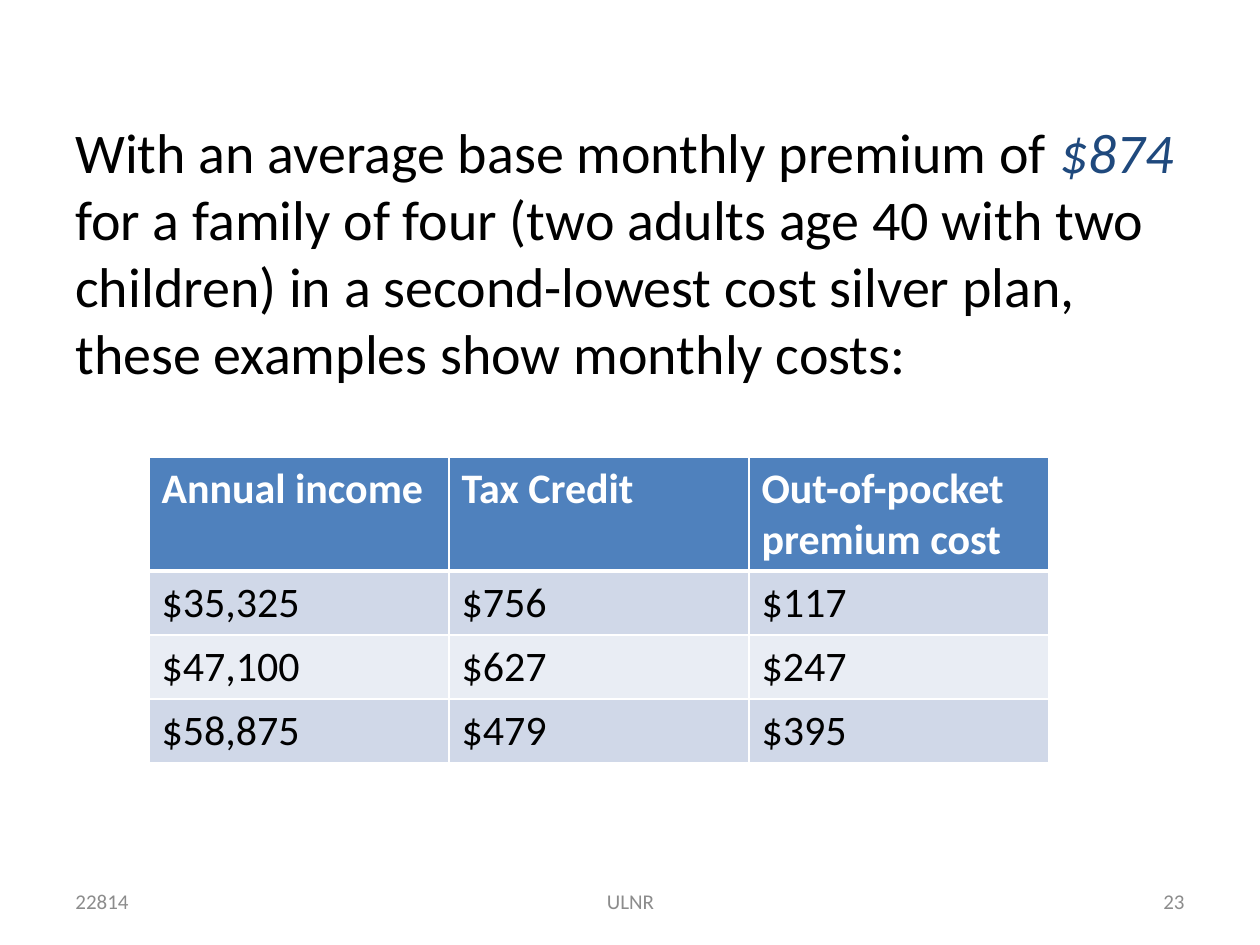
from pptx import Presentation
from pptx.dml.color import RGBColor
from pptx.enum.text import MSO_ANCHOR as Anchor, PP_ALIGN as Align
from pptx.oxml.ns import qn
from pptx.util import Emu, Pt
from lxml.etree import SubElement

SCALE = 914400 / 126


def px(length):
    return Emu(round(length * SCALE))


def style(span, size, color, bold=False, italic=False):
    font = span.font
    font.name = "Calibri"
    font.size = Pt(size)
    font.bold = bold
    font.italic = italic
    font.color.rgb = RGBColor.from_string(color)


deck = Presentation()
deck.slide_width, deck.slide_height = px(1260), px(945)
page = deck.slides.add_slide(deck.slide_layouts[6])

intro = page.shapes.add_textbox(px(63), px(111), px(1134), px(733))
intro.text_frame.word_wrap = True
para = intro.text_frame.paragraphs[0]
for text, color, italic in [
    ("With an average base monthly premium of ", "000000", False),
    ("$874 ", "1F497D", True),
    ("for a family of four (two adults age 40 with two children) in a "
     "second-lowest cost silver plan, these examples show monthly costs:", "000000", False),
]:
    span = para.add_run()
    span.text = text
    style(span, 32, color, italic=italic)

rows = [
    ("Annual income", "Tax Credit", "Out-of-pocket premium cost"),
    ("$35,325", "$756", "$117"),
    ("$47,100", "$627", "$247"),
    ("$58,875", "$479", "$395"),
]
fills = ["4F81BD", "D0D8E8", "E9EDF4", "D0D8E8"]
heights = [114, 64, 64, 64]
table = page.shapes.add_table(4, 3, px(149), px(457), px(900), px(sum(heights))).table
for column in table.columns:
    column.width = px(300)
for r, (values, fill, height) in enumerate(zip(rows, fills, heights)):
    table.rows[r].height = px(height)
    for c, value in enumerate(values):
        cell = table.cell(r, c)
        cell.text_frame.text = value
        header = r == 0
        style(cell.text_frame.paragraphs[0].runs[0], 24,
              "FFFFFF" if header else "000000", bold=header)
        properties = cell._tc.get_or_add_tcPr()
        for side in ("L", "R", "T", "B"):
            thick = (r, side) in [(0, "B"), (1, "T")]
            border = SubElement(properties, qn(f"a:ln{side}"), w=str(Pt(3 if thick else 1)))
            solid = SubElement(border, qn("a:solidFill"))
            SubElement(solid, qn("a:srgbClr"), val="FFFFFF")
        cell.fill.solid()
        cell.fill.fore_color.rgb = RGBColor.from_string(fill)

for text, left, width, align in [
    ("22814", 63, 294, Align.LEFT),
    ("ULNR", 431, 399, Align.CENTER),
    ("23", 903, 294, Align.RIGHT),
]:
    footer = page.shapes.add_textbox(px(left), px(876), px(width), px(50))
    frame = footer.text_frame
    frame.word_wrap = True
    frame.vertical_anchor = Anchor.MIDDLE
    frame.text = text
    para = frame.paragraphs[0]
    para.alignment = align
    style(para.runs[0], 12, "8C8C8C")

deck.save("out.pptx")
